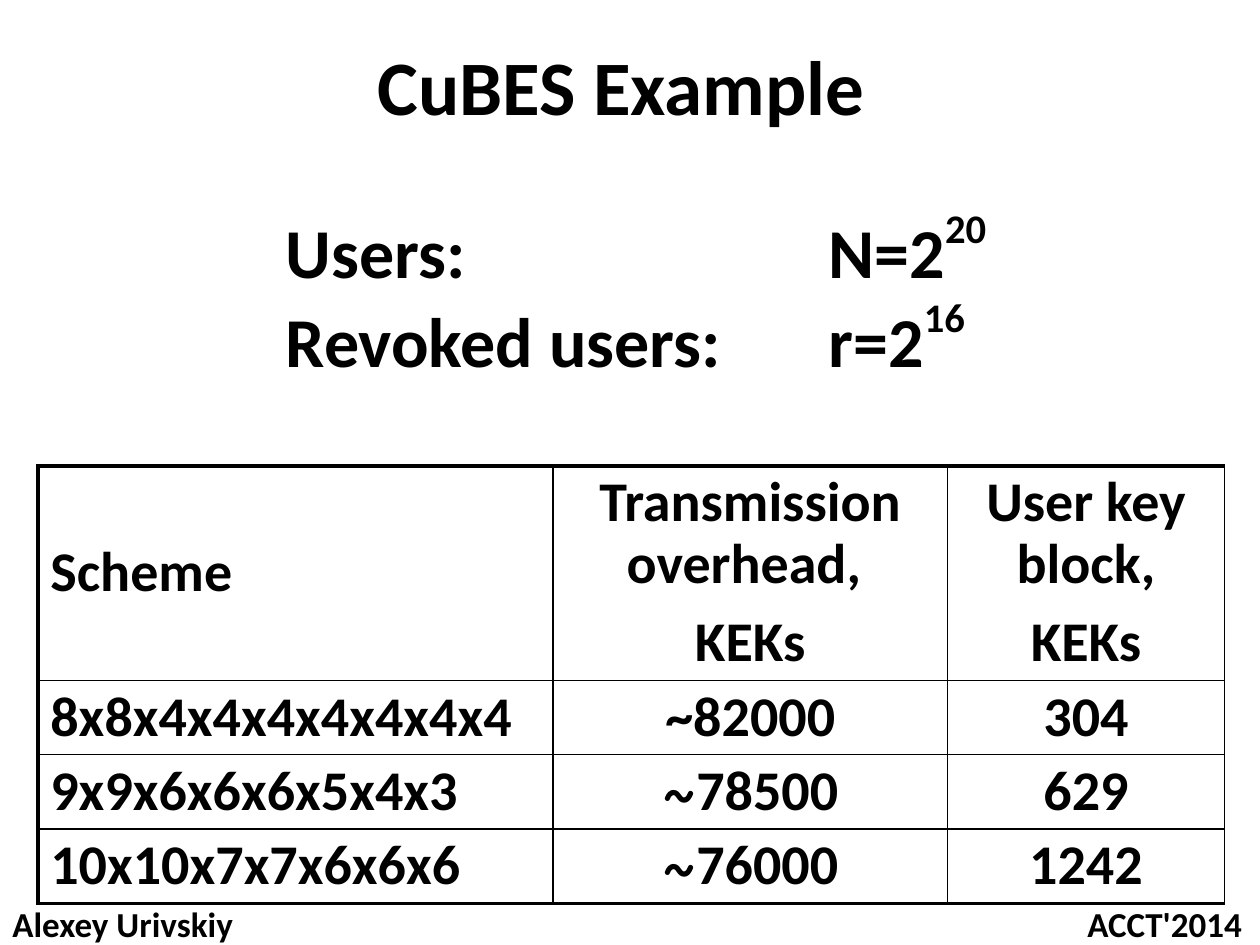
"""Build the CuBES example slide with its parameters and scheme table."""
import pptx
import pptx.util
import pptx.dml.color
import pptx.enum.text
import pptx.oxml
import pptx.oxml.ns

Inches, Pt = pptx.util.Inches, pptx.util.Pt
ALIGN = pptx.enum.text.PP_ALIGN
MIDDLE = pptx.enum.text.MSO_ANCHOR.MIDDLE
INK = "000000"
FONT, TILDE = "Calibri", "Comic Neue"

TITLE = "CuBES Example "
FACTS = [("Users:\tN=2", "20"), ("Revoked users:\tr=2", "16")]
FOOT = "Alexey Urivskiy\tACCT'2014"
ROWS = [
    ["Scheme", "Transmission\voverhead, \nKEKs", "User key\vblock,\nKEKs"],
    ["8x8x4x4x4x4x4x4x4", "~82000", "304"],
    ["9x9x6x6x6x5x4x3", "~78500", "629"],
    ["10x10x7x7x6x6x6", "~76000", "1242"],
]
COLS = [4.09, 3.13, 2.2]
HIGH = [1.7, 0.59, 0.59, 0.59]


def color(code):
    return pptx.dml.color.RGBColor.from_string(code)


def style(run, size, face=FONT):
    font = run.font
    font.name, font.size, font.bold = face, Pt(size), True
    font.color.rgb = color(INK)


def add_xml(node, body):
    tag, rest = body.split(" ", 1)
    node.append(pptx.oxml.parse_xml(
        f"<a:{tag} {pptx.oxml.ns.nsdecls('a')} {rest}"))


def add_tab(para, inch, side):
    add_xml(para._p.get_or_add_pPr(),
            f'tabLst ><a:tab pos="{Inches(inch)}" algn="{side}"/></a:tabLst>')


def add_box(left, top, width, height):
    frame = slide.shapes.add_textbox(
        Inches(left), Inches(top), Inches(width), Inches(height)).text_frame
    frame.word_wrap = True
    return frame


def border(cell, row, col):
    edges = {"L": col == 0, "R": col == len(COLS) - 1,
             "T": row == 0, "B": row == len(ROWS) - 1}
    props = cell._tc.get_or_add_tcPr()
    for side, outer in edges.items():
        width = Pt(2.25 if outer and side != "R" else 1)
        add_xml(props, f'ln{side} w="{width}"><a:solidFill><a:srgbClr val="{INK}"/>'
                       f'</a:solidFill></a:ln{side}>')


def fill_cell(cell, text, row, col):
    border(cell, row, col)
    cell.fill.background()
    cell.vertical_anchor = MIDDLE
    cell.text_frame.text = text
    for para in cell.text_frame.paragraphs:
        para.alignment = ALIGN.CENTER if col else ALIGN.LEFT
        para.line_spacing = 0.9
        add_xml(para._p.get_or_add_pPr(),
                'spcBef ><a:spcPct val="30000"/></a:spcBef>')
        if text.startswith("~") and row > 1:
            para.text = "~"
            para.add_run().text = text[1:]
        for run in para.runs:
            style(run, 32, TILDE if run.text == "~" else FONT)


deck = pptx.Presentation()
deck.slide_width, deck.slide_height = Inches(10), Inches(7.5)
slide = deck.slides.add_slide(deck.slide_layouts[5])

title = slide.shapes.title
title.left, title.top = Inches(0), Inches(0.26)
title.width, title.height = Inches(10), Inches(0.82)
title.text_frame.text = TITLE
title.text_frame.vertical_anchor = MIDDLE
head = title.text_frame.paragraphs[0]
head.alignment = ALIGN.CENTER
style(head.runs[0], 44)

facts = add_box(2.17, 1.56, 7.5, 1.45)
facts.text = "\n".join(base for base, power in FACTS)
for para, (base, power) in zip(facts.paragraphs, FACTS):
    add_tab(para, 4.31, "l")
    para.add_run().text = power
    for run in para.runs:
        style(run, 40)
    para.runs[-1].font._element.set("baseline", "50000")

grid = slide.shapes.add_table(
    len(ROWS), len(COLS), Inches(0.3), Inches(3.7),
    Inches(sum(COLS)), Inches(sum(HIGH))).table
grid.first_row = grid.horz_banding = False
for col, width in enumerate(COLS):
    grid.columns[col].width = Inches(width)
for row, texts in enumerate(ROWS):
    grid.rows[row].height = Inches(HIGH[row])
    for col, text in enumerate(texts):
        fill_cell(grid.cell(row, col), text, row, col)

foot = add_box(0, 7.13, 10, 0.4)
foot.text = FOOT
foot.vertical_anchor = MIDDLE
add_tab(foot.paragraphs[0], 9.76, "r")
for run in foot.paragraphs[0].runs:
    style(run, 20)

deck.save("out.pptx")
